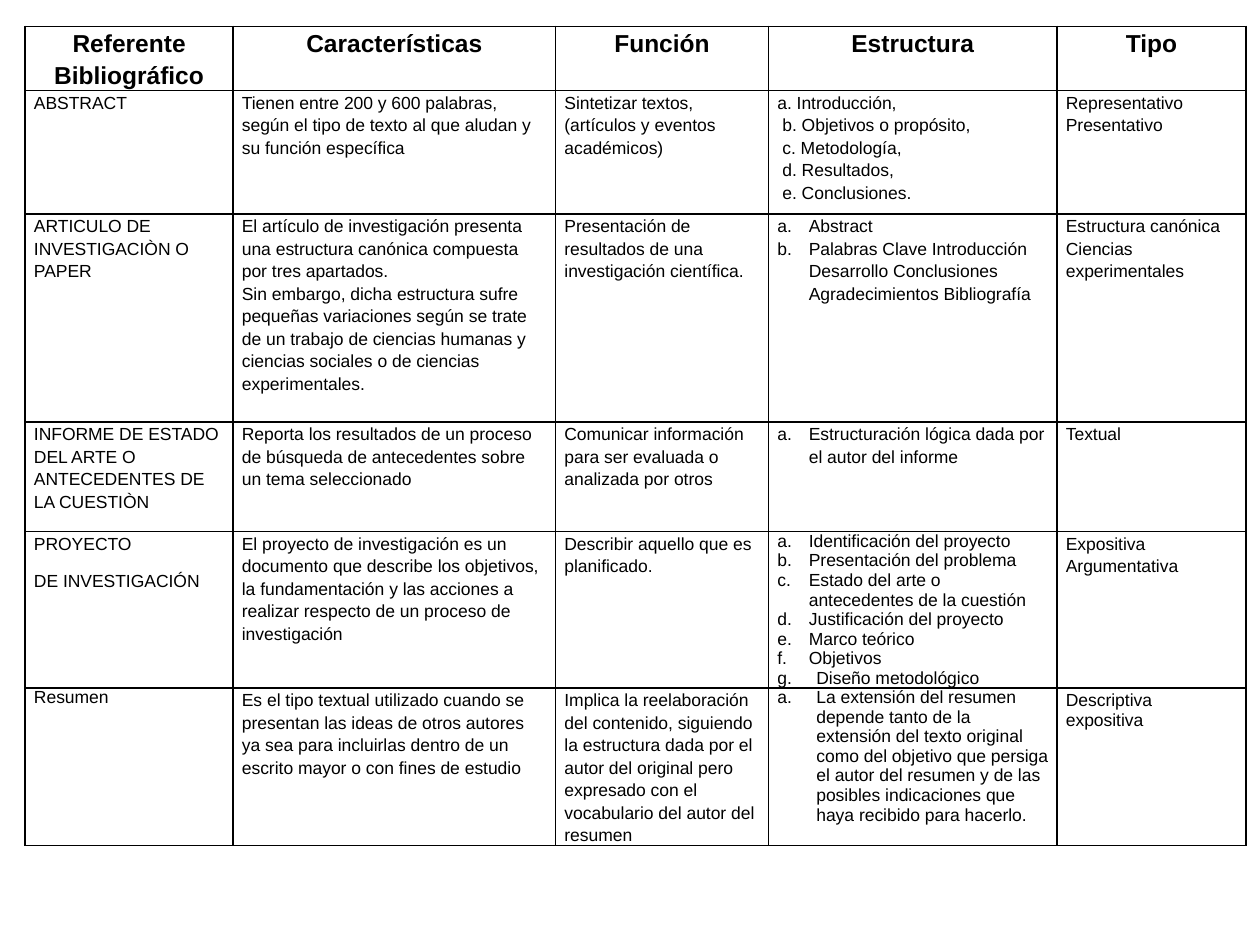
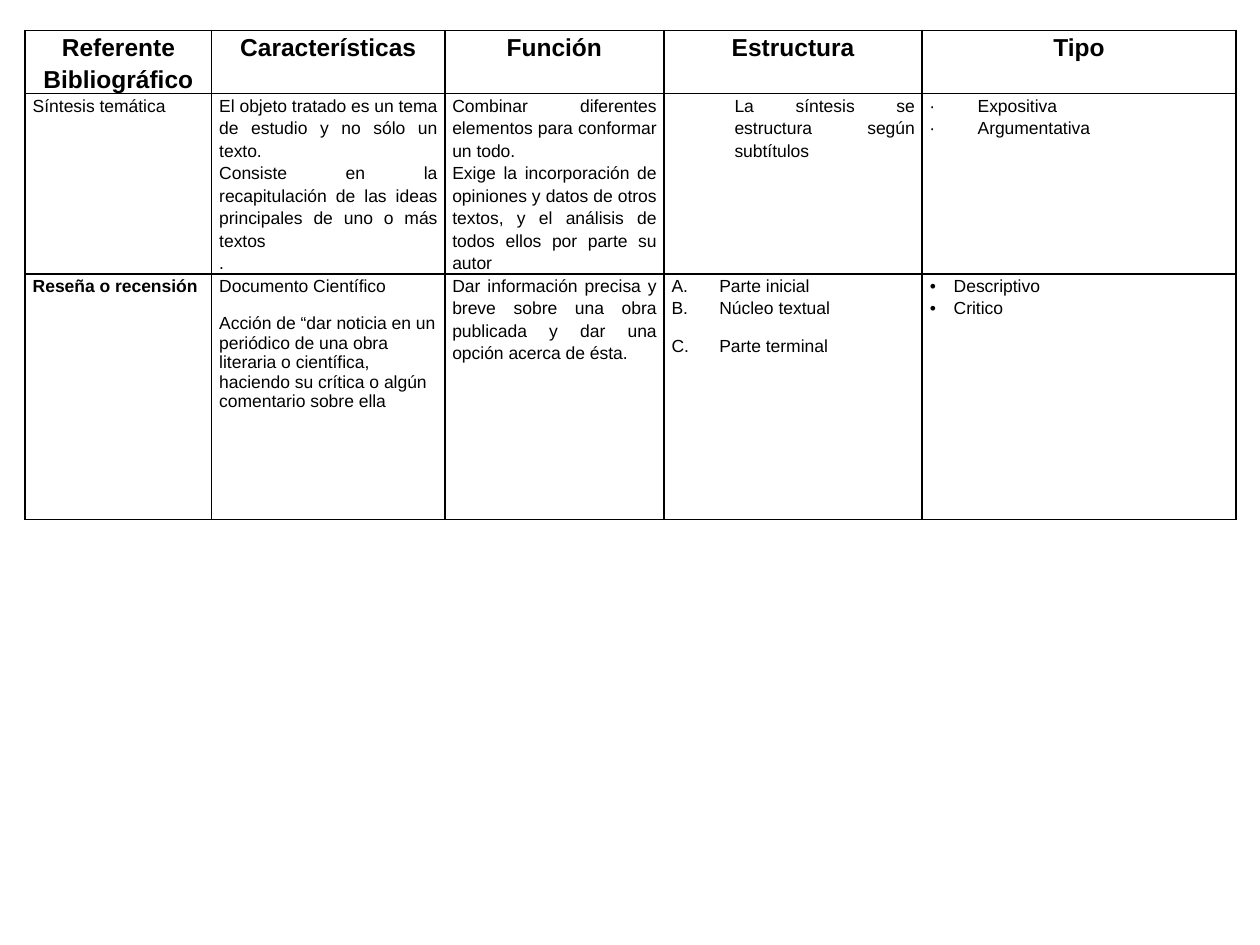
from dataclasses import dataclass
from functools import partial
from typing import Optional, Union

import lxml.etree
import pptx
import pptx.dml.color
import pptx.enum.text
import pptx.oxml.ns
import pptx.slide
import pptx.table
import pptx.text.text
import pptx.util

Inches = pptx.util.Inches
Pt = pptx.util.Pt
Align = pptx.enum.text.PP_ALIGN
qn = pptx.oxml.ns.qn

BLACK = pptx.dml.color.RGBColor(0x00, 0x00, 0x00)
FONT = "Arial"
HEADER_SIZE = Pt(14)
BODY_SIZE = Pt(10)
BORDER_WIDTH = Pt(1)
LOOSE = 1.15
SINGLE = 1.0
LOWER = "alphaLcPeriod"
UPPER = "alphaUcPeriod"
HEADINGS = ("Referente Bibliográfico", "Características", "Función", "Estructura", "Tipo")


@dataclass(frozen=True)
class Para:
    text: str
    spacing: float = LOOSE
    before: float = 0
    align: Align = Align.LEFT
    indent: float = 0
    numbering: Optional[str] = None
    bullet: Optional[str] = None
    bold: bool = False
    size: int = BODY_SIZE


Entry = Union[str, Para]
Cell = Union[Entry, list[Entry]]


@dataclass(frozen=True)
class Row:
    height: float
    cells: tuple[Cell, ...]


@dataclass(frozen=True)
class Grid:
    left: float
    top: float
    side_margin: float
    widths: tuple[float, ...]
    rows: tuple[Row, ...]


heading = partial(Para, align=Align.CENTER, bold=True, size=HEADER_SIZE)
justified = partial(Para, align=Align.JUSTIFY)
lettered = partial(Para, indent=0.25, numbering=LOWER)
wide_lettered = partial(Para, spacing=SINGLE, indent=0.31, numbering=LOWER)
capital = partial(Para, indent=0.38, numbering=UPPER)
dotted = partial(Para, align=Align.JUSTIFY, indent=0.38, bullet="∙")
bulleted = partial(Para, indent=0.19, bullet="•")

HEADER_CELLS = tuple(heading(name) for name in HEADINGS)

RESEARCH_TEXTS = Grid(
    left=0.2, top=0.21, side_margin=0.07,
    widths=(1.65, 2.56, 1.69, 2.29, 1.5),
    rows=(
        Row(0.51, HEADER_CELLS),
        Row(0.98, (
            "ABSTRACT",
            "Tienen entre 200 y 600 palabras, según el tipo de texto al que aludan y su "
            "función específica",
            "Sintetizar textos, (artículos y eventos académicos)",
            ["a. Introducción,"] + [
                Para(part, indent=0.04) for part in (
                    "b. Objetivos o propósito,", "c. Metodología,",
                    "d. Resultados,", "e. Conclusiones.")],
            ["Representativo", "Presentativo"],
        )),
        Row(1.65, (
            "ARTICULO DE INVESTIGACIÒN O PAPER",
            ["El artículo de investigación presenta una estructura canónica compuesta por "
             "tres apartados.",
             "Sin embargo, dicha estructura sufre pequeñas variaciones según se trate de un "
             "trabajo de ciencias humanas y ciencias sociales o de ciencias experimentales."],
            "Presentación de resultados de una investigación científica.",
            [lettered("Abstract"),
             lettered("Palabras Clave Introducción Desarrollo Conclusiones "
                      "Agradecimientos Bibliografía")],
            ["Estructura canónica", "Ciencias experimentales"],
        )),
        Row(0.87, (
            "INFORME DE ESTADO DEL ARTE O ANTECEDENTES DE LA CUESTIÒN",
            "Reporta los resultados de un proceso de búsqueda de antecedentes sobre un tema "
            "seleccionado",
            "Comunicar información para ser evaluada o analizada por otros",
            lettered("Estructuración lógica dada por el autor del informe"),
            "Textual",
        )),
        Row(1.24, (
            ["PROYECTO", Para("DE INVESTIGACIÓN", spacing=SINGLE, before=10)],
            "El proyecto de investigación es un documento que describe los objetivos, la "
            "fundamentación y las acciones a realizar respecto de un proceso de investigación",
            "Describir aquello que es planificado.",
            [lettered(part, spacing=SINGLE) for part in (
                "Identificación del proyecto", "Presentación del problema",
                "Estado del arte o antecedentes de la cuestión",
                "Justificación del proyecto", "Marco teórico", "Objetivos")]
            + [wide_lettered("Diseño metodológico")],
            ["Expositiva", "Argumentativa"],
        )),
        Row(1.25, (
            Para("Resumen", spacing=SINGLE),
            "Es el tipo textual utilizado cuando se presentan las ideas de otros autores ya "
            "sea para incluirlas dentro de un escrito mayor o con fines de estudio",
            "Implica la reelaboración del contenido, siguiendo la estructura dada por el autor "
            "del original pero expresado con el vocabulario del autor del resumen",
            wide_lettered(
                "La extensión del resumen depende tanto de la extensión del texto original como "
                "del objetivo que persiga el autor del resumen y de las posibles indicaciones "
                "que haya recibido para hacerlo."),
            ["Descriptiva", Para("expositiva", spacing=SINGLE)],
        )),
    ),
)

REVIEW_TEXTS = Grid(
    left=0.2, top=0.24, side_margin=0.06,
    widths=(1.48, 1.85, 1.74, 2.05, 2.49),
    rows=(
        Row(0.5, HEADER_CELLS),
        Row(1.43, (
            justified("Síntesis temática"),
            [justified("El objeto tratado es un tema de estudio y no sólo un texto."),
             justified("Consiste en la recapitulación de las ideas principales de uno o más "
                       "textos"),
             justified(".")],
            [justified("Combinar diferentes elementos para conformar un todo."),
             justified("Exige la incorporación de opiniones y datos de otros textos, y el "
                       "análisis de todos ellos por parte su autor")],
            justified("La síntesis se estructura según subtítulos", indent=0.5),
            [dotted("Expositiva"), dotted("Argumentativa")],
        )),
        Row(1.95, (
            justified("Reseña o recensión", bold=True),
            ["Documento Científico",
             Para("Acción de “dar noticia en un periódico de una obra literaria o científica, "
                  "haciendo su crítica o algún comentario sobre ella",
                  spacing=SINGLE, before=10)],
            justified("Dar información precisa y breve sobre una obra publicada y dar una "
                      "opción acerca de ésta."),
            [capital("Parte inicial"), capital("Núcleo textual"),
             capital("Parte terminal", spacing=SINGLE, before=10)],
            [bulleted("Descriptivo"), bulleted("Critico")],
        )),
    ),
)


def set_indent_and_bullet(paragraph: pptx.text.text._Paragraph, para: Para) -> None:
    """Hang the first line only where a bullet or number fills the gap."""
    properties = paragraph._p.get_or_add_pPr()
    properties.set("marL", str(Inches(para.indent)))
    marked = para.numbering or para.bullet
    properties.set("indent", str(-Inches(para.indent) if marked else 0))
    if not marked:
        return
    lxml.etree.SubElement(properties, qn("a:buFont"), typeface=FONT)
    if para.numbering:
        lxml.etree.SubElement(properties, qn("a:buAutoNum"), type=para.numbering)
    else:
        lxml.etree.SubElement(properties, qn("a:buChar"), char=para.bullet)


def write_paragraph(paragraph: pptx.text.text._Paragraph, para: Para) -> None:
    set_indent_and_bullet(paragraph, para)
    paragraph.text = para.text
    paragraph.alignment = para.align
    paragraph.line_spacing = para.spacing
    paragraph.space_before = Pt(para.before)
    paragraph.font.name = FONT
    paragraph.font.size = para.size
    paragraph.font.bold = para.bold
    paragraph.font.color.rgb = BLACK


def set_borders(cell: pptx.table._Cell) -> None:
    properties = cell._tc.get_or_add_tcPr()
    for position, side in enumerate(("lnL", "lnR", "lnT", "lnB")):
        line = lxml.etree.Element(qn(f"a:{side}"), w=str(BORDER_WIDTH))
        fill = lxml.etree.SubElement(line, qn("a:solidFill"))
        lxml.etree.SubElement(fill, qn("a:srgbClr"), val=str(BLACK))
        properties.insert(position, line)


def fill_cell(cell: pptx.table._Cell, content: Cell, side_margin: float) -> None:
    cell.margin_left = cell.margin_right = Inches(side_margin)
    cell.margin_top = cell.margin_bottom = 0
    cell.fill.background()
    set_borders(cell)
    entries = content if isinstance(content, list) else [content]
    frame = cell.text_frame
    for index, entry in enumerate(entries):
        paragraph = frame.add_paragraph() if index else frame.paragraphs[0]
        write_paragraph(paragraph, Para(entry) if isinstance(entry, str) else entry)


def draw_grid(page: pptx.slide.Slide, grid: Grid) -> None:
    height = sum(row.height for row in grid.rows)
    table = page.shapes.add_table(
        len(grid.rows), len(grid.widths), Inches(grid.left), Inches(grid.top),
        Inches(sum(grid.widths)), Inches(height)).table
    table.first_row = table.horz_banding = False
    for column, width in zip(table.columns, grid.widths):
        column.width = Inches(width)
    for table_row, row in zip(table.rows, grid.rows):
        table_row.height = Inches(row.height)
        for cell, content in zip(table_row.cells, row.cells):
            fill_cell(cell, content, grid.side_margin)


def main() -> None:
    deck = pptx.Presentation()
    deck.slide_width, deck.slide_height = Inches(10), Inches(7.5)
    blank = deck.slide_layouts[6]
    for grid in (RESEARCH_TEXTS, REVIEW_TEXTS):
        draw_grid(deck.slides.add_slide(blank), grid)
    deck.save("out.pptx")


if __name__ == "__main__":
    main()
